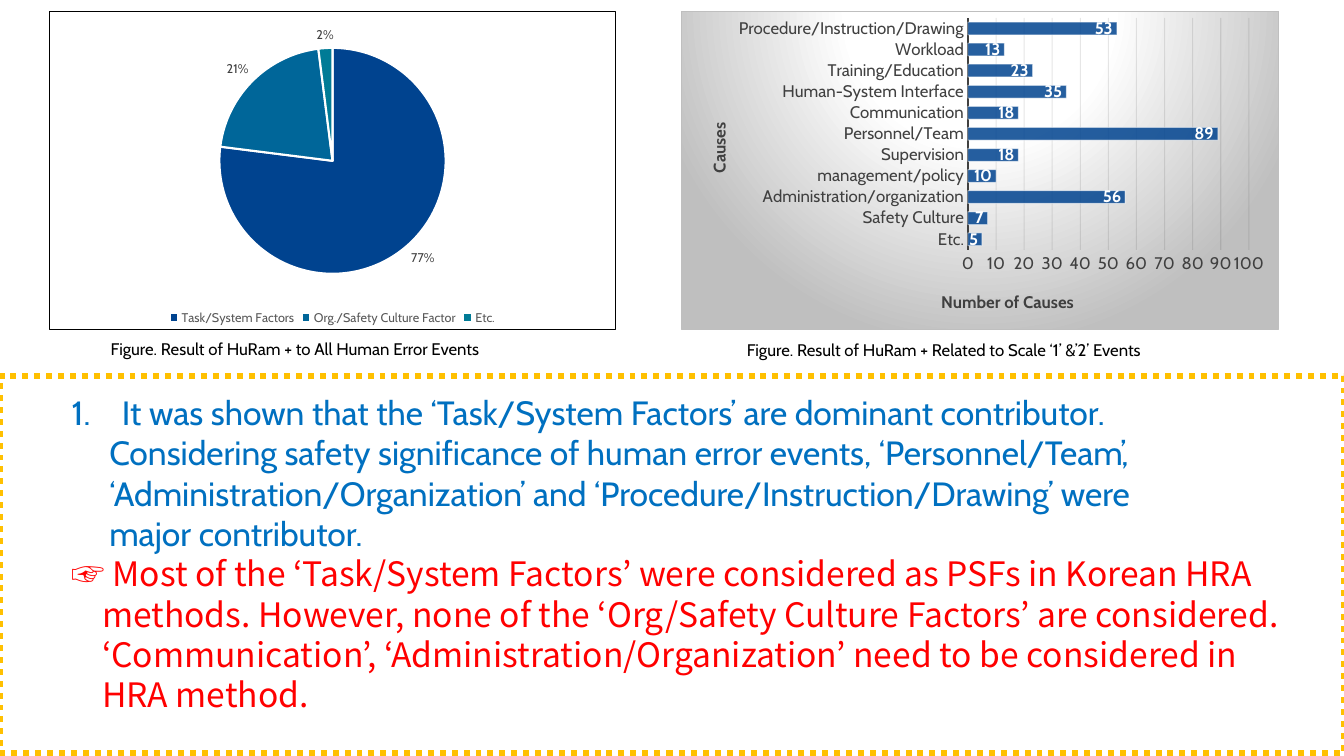
from dataclasses import dataclass

from lxml.etree import SubElement
from pptx import Presentation
from pptx.chart.data import CategoryChartData
from pptx.dml.color import RGBColor as RGB
from pptx.enum.chart import XL_CHART_TYPE as Kind
from pptx.enum.chart import XL_LABEL_POSITION as Spot
from pptx.enum.chart import XL_LEGEND_POSITION as Side
from pptx.enum.chart import XL_TICK_MARK as Tick
from pptx.enum.dml import MSO_LINE as Dash
from pptx.enum.shapes import MSO_SHAPE as Shape
from pptx.enum.text import MSO_ANCHOR as Anchor
from pptx.enum.text import MSO_AUTO_SIZE as Fit
from pptx.oxml import parse_xml
from pptx.oxml.ns import nsdecls, qn
from pptx.util import Cm, Pt


@dataclass(frozen=True)
class Theme:
    sans: str = "Cabin"
    cjk: str = "Noto Sans CJK KR"
    black: str = "000000"
    white: str = "FFFFFF"
    dark: str = "404040"
    gray: str = "595959"
    grid: str = "0D0D0D"
    silver: str = "BFBFBF"
    navy: str = "00438F"
    blue: str = "006699"
    teal: str = "007B96"
    gold: str = "FFC000"
    azure: str = "0070C0"
    red: str = "FF0000"
    tiny: int = 9
    small: int = 12
    large: int = 24


T = Theme()

SHARES = {"Task/System Factors": 77, "Org./Safety Culture Factor": 21, "Etc.": 2}
CAUSES = {
    "Etc.": 5,
    "Safety Culture": 7,
    "Administration/organization": 56,
    "management/policy": 10,
    "Supervision": 18,
    "Personnel/Team": 89,
    "Communication": 18,
    "Human-System Interface": 35,
    "Training/Education": 23,
    "Workload": 13,
    "Procedure/Instruction/Drawing": 53,
}
FINDING = [
    "It was shown that the ‘Task/System Factors’ are dominant contributor.",
    "Considering safety significance of human error events, ‘Personnel/Team’,",
    "‘Administration/Organization’ and ‘Procedure/Instruction/Drawing’ were",
    "major contributor.",
]
ADVICE = [
    "☞ Most of the ‘Task/System Factors’ were considered as PSFs in Korean HRA",
    "methods. However, none of the ‘Org/Safety Culture Factors’ are considered.",
    "‘Communication’, ‘Administration/Organization’ need to be considered in",
    "HRA method.",
]


def style(font, size=T.small, color=T.black, name=T.sans, bold=False):
    font.size, font.name, font.bold = Pt(size), name, bold
    font.color.rgb = RGB.from_string(color)


def write(para, text, **look):
    run = para.add_run()
    run.text = text
    style(run.font, **look)


def paint(fill, color):
    fill.solid()
    fill.fore_color.rgb = RGB.from_string(color)


def stroke(line, color, width):
    paint(line.fill, color)
    line.width = Pt(width)


def fade(node, *shares):
    """Give the colours under node, in order, these opacities in percent."""
    for tint, share in zip(node.iter(qn("a:srgbClr")), shares):
        SubElement(tint, qn("a:alpha")).set("val", str(share * 1000))


def place(node, index, **spots):
    """Fix the layout of a chart part, in fractions of the chart."""
    for old in node.findall(qn("c:layout")):
        node.remove(old)
    layout = parse_xml(f"<c:layout {nsdecls('c')}><c:manualLayout/></c:layout>")
    tags = {"xMode": "edge", "yMode": "edge", **spots}
    if "w" in spots:
        tags = {"layoutTarget": "inner", **tags}
    for tag, value in tags.items():
        SubElement(layout[0], qn(f"c:{tag}")).set("val", str(value))
    node.insert(index, layout)


def frame(chart, fill, edge):
    chart.element.find(qn("c:chart")).addnext(parse_xml(
        f"<c:spPr {nsdecls('c', 'a')}>{fill}<a:ln w='9525'><a:solidFill>"
        f"<a:srgbClr val='{edge}'/></a:solidFill></a:ln></c:spPr>"))


def plot(slide, kind, values, box, **area):
    data = CategoryChartData()
    data.categories = list(values)
    data.add_series("Series 1", list(values.values()))
    chart = slide.shapes.add_chart(kind, *map(Cm, box), data).chart
    style(chart.font)
    chart.has_title = False
    chart.has_legend = False
    place(chart.element.find(f".//{qn('c:plotArea')}"), 0, **area)
    return chart


def label(part, spot, **look):
    tags = part.data_labels
    tags.position = spot
    style(tags.font, **look)
    return tags


def head(axis, text, x, y):
    write(axis.axis_title.text_frame.paragraphs[0], text, color=T.dark, bold=True)
    place(axis._element.find(qn("c:title")), 1, x=x, y=y)
    axis.major_tick_mark = axis.minor_tick_mark = Tick.NONE
    style(axis.tick_labels.font, color=T.dark)


def pie(slide):
    chart = plot(slide, Kind.PIE, SHARES, (1.24, 0.28, 14.28, 8.03),
                 x=0.3, y=0.11, w=0.4, h=0.72)
    frame(chart, "<a:noFill/>", T.black)
    row = chart.plots[0].series[0]
    for i, color in enumerate((T.navy, T.blue, T.teal)):
        part = row.points[i].format
        paint(part.fill, color)
        stroke(part.line, T.white, 1.5)
    tags = label(row, Spot.OUTSIDE_END, size=T.tiny, color=T.dark)
    tags.show_percentage, tags.show_value = True, False
    tags.number_format, tags.number_format_is_linked = "0%", False
    chart.has_legend = True
    chart.legend.position = Side.BOTTOM
    chart.legend.include_in_layout = False
    style(chart.legend.font, size=T.tiny, color=T.gray)


def bars(slide):
    chart = plot(slide, Kind.BAR_CLUSTERED, CAUSES, (17.15, 0.28, 15.09, 8.03),
                 x=0.48, y=0.02, w=0.47, h=0.73)
    stops = ((0, T.white), (39, T.white), (100, T.silver))
    steps = "".join(f"<a:gs pos='{at * 1000}'><a:srgbClr val='{color}'/></a:gs>"
                    for at, color in stops)
    frame(chart, f"<a:gradFill><a:gsLst>{steps}</a:gsLst><a:path path='circle'>"
          "<a:fillToRect l='50000' t='-80000' r='50000' b='180000'/>"
          "</a:path></a:gradFill>", T.silver)
    chart.plots[0].gap_width = 65
    chart.plots[0].vary_by_categories = False
    row = chart.plots[0].series[0]
    paint(row.format.fill, T.navy)
    stroke(row.format.line, T.white, 0.75)
    fade(row._element, 85, 50)
    label(row, Spot.INSIDE_END, color=T.white, bold=True).show_value = True
    cause, count = chart.category_axis, chart.value_axis
    head(cause, "Causes", 0.04, 0.34)
    stroke(cause.format.line, T.dark, 1.5)
    head(count, "Number of Causes", 0.43, 0.87)
    count.minimum_scale, count.maximum_scale, count.major_unit = 0, 100, 10
    count.format.line.fill.background()
    mesh = count.major_gridlines
    stroke(mesh.format.line, T.grid, 0.75)
    fade(count._element.find(qn("c:majorGridlines")), 10)


def caption(slide, text, *box):
    words = slide.shapes.add_textbox(*map(Cm, box)).text_frame
    words.word_wrap = True
    write(words.paragraphs[0], text)


def panel(slide):
    box = slide.shapes.add_shape(Shape.RECTANGLE, *map(Cm, (0, 9.47, 33.87, 9.5)))
    box.shadow.inherit = False
    paint(box.fill, T.white)
    stroke(box.line, T.gold, 4.25)
    box.line.dash_style = Dash.ROUND_DOT


def item(para, text, left, hang=0, number=False, **look):
    props = para._p.get_or_add_pPr()
    props.set("marL", str(Cm(left)))
    props.set("indent", str(Cm(-hang)))
    if number:
        SubElement(props, qn("a:buFont")).set("typeface", "+mj-lt")
        SubElement(props, qn("a:buAutoNum")).set("type", "arabicPeriod")
    else:
        SubElement(props, qn("a:buNone"))
    para.space_before = Pt(0)
    write(para, text, size=T.large, **look)


def notes(slide, body):
    body.left, body.top, body.width, body.height = map(Cm, (1.55, 9.75, 32, 8.46))
    slide.shapes._spTree.append(body._element)  # in front of the panel
    words = body.text_frame
    words.word_wrap, words.auto_size = True, Fit.NONE
    words.vertical_anchor = Anchor.TOP
    for i, text in enumerate(FINDING):
        para = words.add_paragraph() if i else words.paragraphs[0]
        left, hang = (0.95, 0) if i else (1.27, 1.27)
        item(para, text, left, hang, number=not i, color=T.azure)
    for i, text in enumerate(ADVICE):
        item(words.add_paragraph(), text, 0.77 if i else 0, color=T.red, name=T.cjk)


def main():
    deck = Presentation()
    deck.slide_width, deck.slide_height = Cm(33.87), Cm(19.05)
    slide = deck.slides.add_slide(deck.slide_layouts[1])
    title, body = slide.placeholders
    slide.shapes._spTree.remove(title._element)
    pie(slide)
    bars(slide)
    caption(slide, "Figure. Result of HuRam + to All Human Error Events",
            2.54, 8.41, 12.6, 0.76)
    caption(slide, "Figure. Result of HuRam + Related to Scale ‘1’ &’2’ Events",
            18.57, 8.43, 14.66, 0.76)
    panel(slide)
    notes(slide, body)
    deck.save("out.pptx")


if __name__ == "__main__":
    main()
